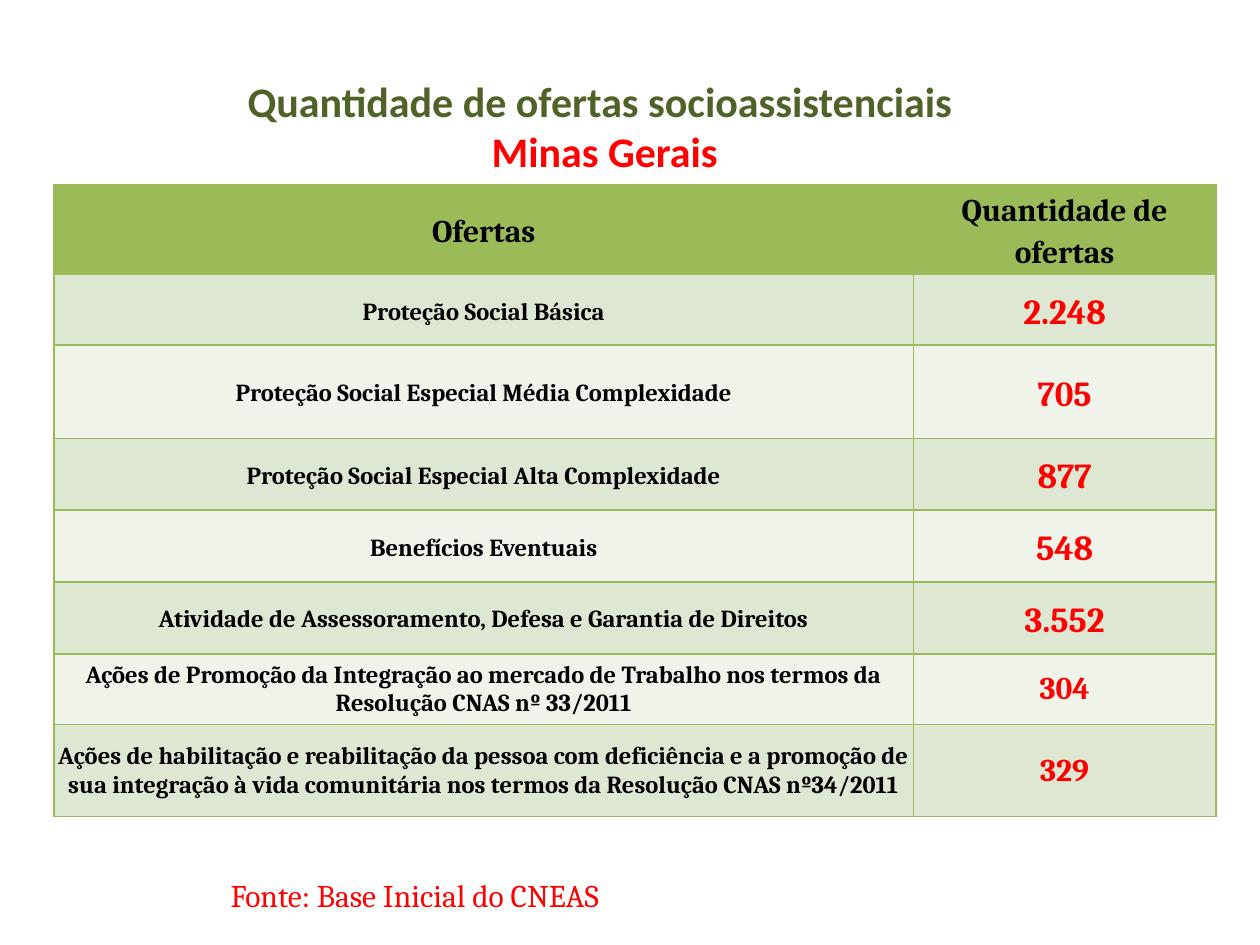
from lxml import etree
from pptx import Presentation
from pptx.dml.color import RGBColor
from pptx.enum import text as t
from pptx.oxml import ns
from pptx.util import Inches, Pt

GREEN, RED, BLACK = "9BBB59", "FF0000", "000000"
BANDS = ("DEE7D1", "EFF3EA")
TITLE = [
    ("Quantidade de ofertas socioassistenciais ", "4F6228"),
    ("Minas Gerais", RED),
]
HEADER = ("Ofertas", "Quantidade de ofertas")
OFFERS = [
    ("Proteção Social Básica", "2.248"),
    ("Proteção Social Especial Média Complexidade", "705"),
    ("Proteção Social Especial Alta Complexidade", "877"),
    ("Benefícios Eventuais", "548"),
    ("Atividade de Assessoramento, Defesa e Garantia de Direitos", "3.552"),
    ("Ações de Promoção da Integração ao mercado de Trabalho nos termos da "
     "Resolução CNAS nº 33/2011", "304"),
    ("Ações de habilitação e reabilitação da pessoa com deficiência e a promoção de "
     "sua integração à vida comunitária nos termos da Resolução CNAS nº34/2011", "329"),
]
SOURCE = "Fonte: Base Inicial do CNEAS"
COLUMN_WIDTHS = (6.82, 2.4)
ROW_HEIGHTS = (0.71, 0.56, 0.74, 0.57, 0.57, 0.57, 0.56, 0.73)
FIRST_COMPACT_ROW = 6


def color(value):
    return RGBColor.from_string(value)


def add_run(paragraph, content, size, name, hex_color, bold=True):
    run = paragraph.add_run()
    run.text = content
    run.font.size = Pt(size)
    run.font.name = name
    run.font.bold = bold
    run.font.color.rgb = color(hex_color)


def add_borders(cell):
    properties = cell._tc.get_or_add_tcPr()
    for position, side in enumerate(("lnL", "lnR", "lnT", "lnB")):
        line = etree.Element(ns.qn(f"a:{side}"), w=str(Pt(1)))
        fill = etree.SubElement(line, ns.qn("a:solidFill"))
        etree.SubElement(fill, ns.qn("a:srgbClr"), val=GREEN)
        properties.insert(position, line)


def fill_cell(cell, content, size, hex_color, background, compact):
    cell.fill.solid()
    cell.fill.fore_color.rgb = color(background)
    cell.vertical_anchor = t.MSO_ANCHOR.MIDDLE
    cell.margin_left = cell.margin_right = Inches(0.01 if compact else 0.07)
    cell.margin_top = Inches(0.01 if compact else 0)
    cell.margin_bottom = 0
    paragraph = cell.text_frame.paragraphs[0]
    paragraph.alignment = t.PP_ALIGN.CENTER
    if not compact:
        paragraph.line_spacing = 1.15
        paragraph.space_after = Pt(10)
    add_run(paragraph, content, size, "Cambria", hex_color)
    add_borders(cell)


def add_title(slide):
    title = slide.shapes.title
    title.left, title.top = Inches(0.35), Inches(0.14)
    title.width, title.height = Inches(8.9), Inches(1.31)
    frame = title.text_frame
    frame.auto_size = t.MSO_AUTO_SIZE.NONE
    frame.vertical_anchor = t.MSO_ANCHOR.BOTTOM
    for index, (content, hex_color) in enumerate(TITLE):
        paragraph = frame.add_paragraph() if index else frame.paragraphs[0]
        paragraph.alignment = t.PP_ALIGN.CENTER
        add_run(paragraph, content, 24, "Calibri", hex_color)


def add_offers_table(slide):
    rows = [HEADER] + OFFERS
    table = slide.shapes.add_table(
        len(rows), len(HEADER), Inches(0.43), Inches(1.47),
        Inches(sum(COLUMN_WIDTHS)), Inches(sum(ROW_HEIGHTS))).table
    for column, width in zip(table.columns, COLUMN_WIDTHS):
        column.width = Inches(width)
    for index, (values, height) in enumerate(zip(rows, ROW_HEIGHTS)):
        table.rows[index].height = Inches(height)
        compact = index >= FIRST_COMPACT_ROW
        if index == 0:
            background, styles = GREEN, ((18, BLACK), (18, BLACK))
        else:
            background = BANDS[(index - 1) % 2]
            styles = ((14, BLACK), (18 if compact else 20, RED))
        for column, (content, style) in enumerate(zip(values, styles)):
            fill_cell(table.cell(index, column), content, *style, background, compact)


def add_source(slide):
    box = slide.shapes.add_textbox(Inches(1.46), Inches(6.9), Inches(4.25), Inches(0.4))
    frame = box.text_frame
    frame.word_wrap = True
    frame.margin_left = Inches(0.37)
    add_run(frame.paragraphs[0], SOURCE, 18, "Cambria", RED, bold=False)


def main():
    presentation = Presentation()
    presentation.slide_width, presentation.slide_height = Inches(10), Inches(7.5)
    slide = presentation.slides.add_slide(presentation.slide_layouts[5])
    add_offers_table(slide)
    add_title(slide)
    add_source(slide)
    presentation.save("out.pptx")


if __name__ == "__main__":
    main()
